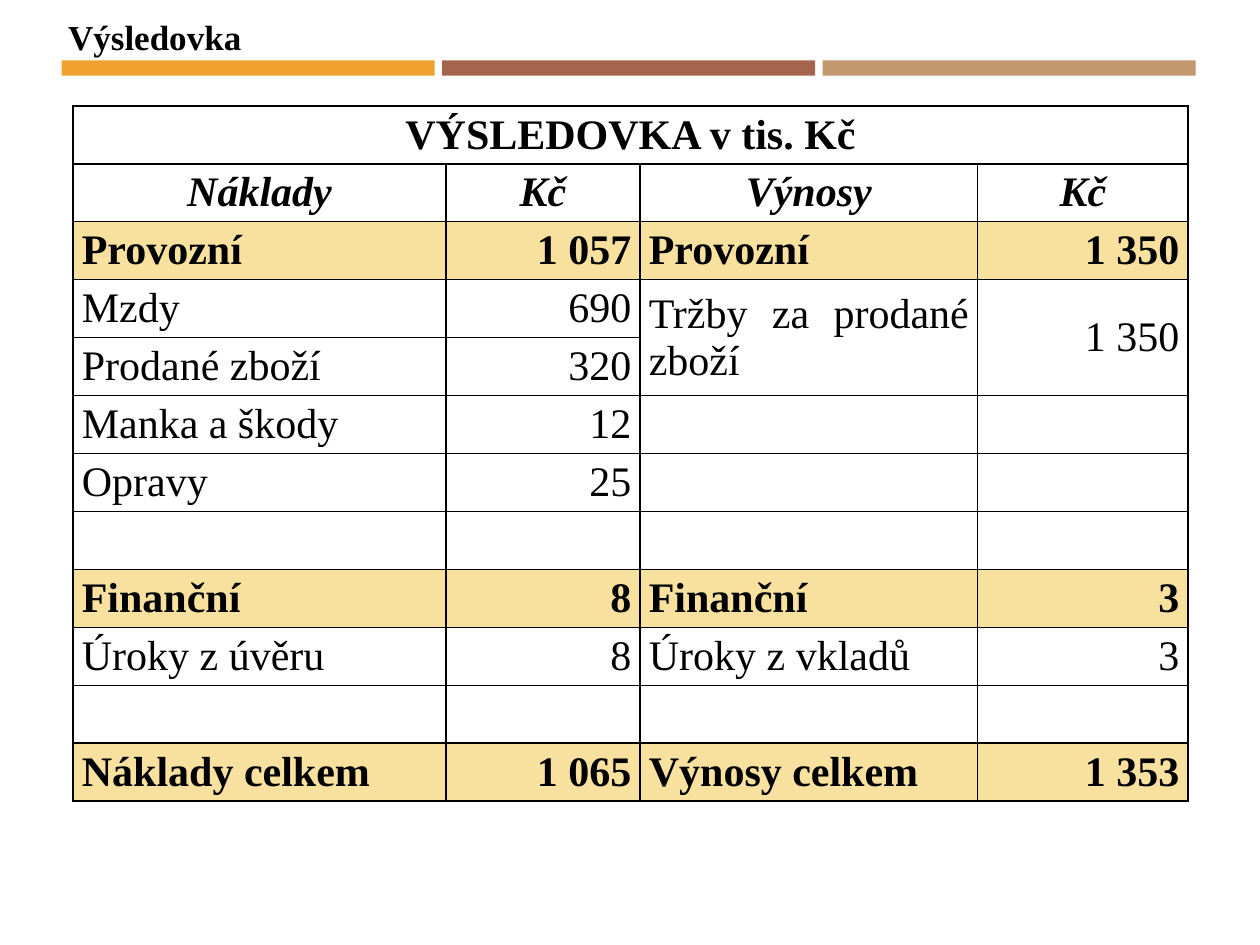
import pptx
import pptx.dml.color
import pptx.enum.shapes
import pptx.enum.text
import pptx.oxml
import pptx.oxml.ns
import pptx.util

Inches, Pt = pptx.util.Inches, pptx.util.Pt
RGB = pptx.dml.color.RGBColor
Align = pptx.enum.text.PP_ALIGN
Anchor = pptx.enum.text.MSO_ANCHOR

BLACK = RGB(0, 0, 0)
SAND = RGB(0xF8, 0xE1, 0x9F)
BARS = [RGB(0xF0, 0xA2, 0x2E), RGB(0xA5, 0x64, 0x4E), RGB(0xC3, 0x98, 0x6D)]
FONT = "Times New Roman"

TITLE = "Výsledovka"
ROWS = [
    ("VÝSLEDOVKA v tis. Kč", "", "", ""),
    ("Náklady", "Kč", "Výnosy", "Kč"),
    ("Provozní", "1 057", "Provozní", "1 350"),
    ("Mzdy", "690", "Tržby za prodané zboží", "1 350"),
    ("Prodané zboží", "320", "", ""),
    ("Manka a škody ", "12", "", ""),
    ("Opravy", "25", "", ""),
    ("", "", "", ""),
    ("Finanční", "8", "Finanční", "3"),
    ("Úroky z úvěru", "8", "Úroky z vkladů", "3"),
    ("", "", "", ""),
    ("Náklady celkem", "1 065", "Výnosy celkem", "1 353"),
]
HEADS = (0, 1)
SUMS = (2, 8, 11)
MERGES = [((0, 0), (0, 3)), ((3, 2), (4, 2)), ((3, 3), (4, 3))]
WIDTHS = [2.96, 1.54, 2.68, 1.67]
HEIGHT = 0.46


def style(para, size, align, bold, italic=False):
    para.alignment = align
    font = para.font
    font.name, font.size = FONT, Pt(size)
    font.bold, font.italic = bold, italic
    font.color.rgb = BLACK


def border(cell):
    """Draw a thin black line on all four sides."""
    props = cell._tc.get_or_add_tcPr()
    for pos, side in enumerate(("lnL", "lnR", "lnT", "lnB")):
        props.insert(pos, pptx.oxml.parse_xml(
            f'<a:{side} {pptx.oxml.ns.nsdecls("a")} w="{Pt(1)}">'
            f'<a:solidFill><a:srgbClr val="{BLACK}"/></a:solidFill></a:{side}>'))


def add_bars(slide):
    width, step = 2.96, 3.02
    for i, color in enumerate(BARS):
        bar = slide.shapes.add_shape(
            pptx.enum.shapes.MSO_SHAPE.RECTANGLE, Inches(0.49 + i * step),
            Inches(0.48), Inches(width), Inches(0.12))
        bar.shadow.inherit = False
        bar.fill.solid()
        bar.fill.fore_color.rgb = color
        bar.line.fill.background()


def set_title(slide):
    title = slide.shapes.title
    title.left, title.top = Inches(0.44), Inches(0.07)
    title.width, title.height = Inches(1.59), Inches(0.44)
    frame = title.text_frame
    frame.text = TITLE
    frame.word_wrap = False
    frame.auto_size = pptx.enum.text.MSO_AUTO_SIZE.SHAPE_TO_FIT_TEXT
    frame.vertical_anchor = Anchor.TOP
    style(frame.paragraphs[0], 20, Align.LEFT, True)


def add_grid(slide):
    grid = slide.shapes.add_table(
        len(ROWS), len(WIDTHS), Inches(0.58), Inches(0.84),
        Inches(sum(WIDTHS)), Inches(HEIGHT * len(ROWS))).table
    grid.first_row = grid.horz_banding = False
    for col, width in zip(grid.columns, WIDTHS):
        col.width = Inches(width)
    for r, row in enumerate(ROWS):
        grid.rows[r].height = Inches(HEIGHT)
        for c, text in enumerate(row):
            cell = grid.cell(r, c)
            cell.text = text
            cell.vertical_anchor = Anchor.MIDDLE
            cell.margin_left = cell.margin_right = Inches(0.07)
            cell.margin_top = cell.margin_bottom = 0
            if r in SUMS:
                cell.fill.solid()
                cell.fill.fore_color.rgb = SAND
            else:
                cell.fill.background()
            if r in HEADS:
                align = Align.CENTER
            else:
                align = Align.RIGHT if c % 2 else Align.JUSTIFY
            style(cell.text_frame.paragraphs[0], 24, align,
                  r in HEADS + SUMS, r == 1)
            border(cell)
    for start, end in MERGES:
        grid.cell(*start).merge(grid.cell(*end))


def main():
    deck = pptx.Presentation()
    deck.slide_width, deck.slide_height = Inches(10), Inches(7.5)
    slide = deck.slides.add_slide(deck.slide_layouts[5])
    add_bars(slide)
    set_title(slide)
    add_grid(slide)
    deck.save("out.pptx")


if __name__ == "__main__":
    main()
